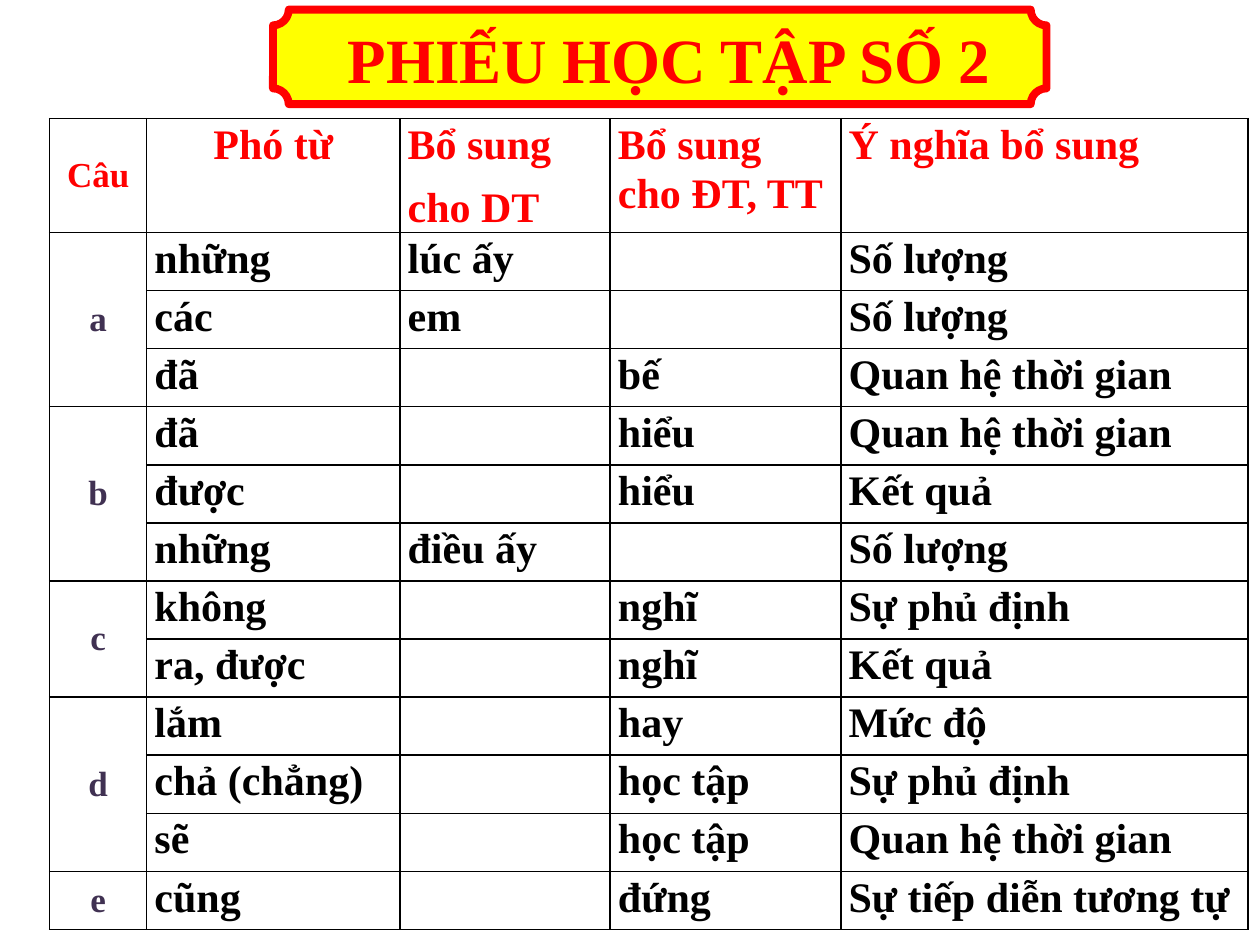
from lxml import etree
from pptx import Presentation
from pptx import util as u
from pptx.dml.color import RGBColor
from pptx.enum import shapes, text
from pptx.oxml import ns

RED, YELLOW, BLACK, PURPLE = "FF0000", "FFFF00", "000000", "403152"

COLUMN_WIDTHS = [55.4, 144.7, 120.2, 131.8, 232.6]
HEADER_HEIGHT, ROW_HEIGHT = 65, 33.2

HEADINGS = ["Câu", "Phó từ", "Bổ sung\ncho DT", "Bổ sung cho ĐT, TT", "Ý nghĩa bổ sung"]

# Sentence -> rows of: adverb, noun modified, verb or adjective modified, meaning
SENTENCES = {
    "a": [
        ("những", "lúc ấy", "", "Số lượng"),
        ("các", "em", "", "Số lượng"),
        ("đã", "", "bế", "Quan hệ thời gian"),
    ],
    "b": [
        ("đã", "", "hiểu", "Quan hệ thời gian"),
        ("được", "", "hiểu", "Kết quả"),
        ("những", "điều ấy", "", "Số lượng"),
    ],
    "c": [
        ("không", "", "nghĩ", "Sự phủ định"),
        ("ra, được", "", "nghĩ", "Kết quả"),
    ],
    "d": [
        ("lắm", "", "hay", "Mức độ"),
        ("chả (chẳng)", "", "học tập", "Sự phủ định"),
        ("sẽ", "", "học tập", "Quan hệ thời gian"),
    ],
    "e": [
        ("cũng", "", "đứng", "Sự tiếp diễn tương tự"),
    ],
}


def color(value):
    return RGBColor.from_string(value)


def set_all(target, values):
    for name, value in values.items():
        setattr(target, name, value)


class Worksheet:
    """Holds the text style and the current slide."""

    font = {"name": "Times New Roman", "bold": True}
    center = {"alignment": text.PP_ALIGN.CENTER}
    body = {"line_spacing": 1.07, "space_after": u.Pt(8)}
    body_cell = {
        "margin_left": u.Pt(4.5), "margin_right": u.Pt(4.5),
        "margin_top": 0, "margin_bottom": 0,
    }
    label_cell = {"vertical_anchor": text.MSO_ANCHOR.MIDDLE}

    def __init__(self, deck):
        self.page = deck.slides.add_slide(deck.slide_layouts[6])

    def add_lines(self, frame, words, size, ink, layout):
        """Add one paragraph for each line of words."""
        for number, line in enumerate(words.split("\n")):
            para = frame.add_paragraph() if number else frame.paragraphs[0]
            set_all(para, layout)
            span = para.add_run()
            span.text = line
            set_all(span.font, {**self.font, "size": u.Pt(size)})
            span.font.color.rgb = color(ink)

    def plaque(self, left, top, width, height):
        box = self.page.shapes.add_shape(
            shapes.MSO_SHAPE.PLAQUE, *map(u.Pt, (left, top, width, height)))
        box.shadow.inherit = False
        box.fill.solid()
        box.fill.fore_color.rgb = color(YELLOW)
        box.line.color.rgb = color(RED)
        box.line.width = u.Pt(4.5)

    def title(self, words, left, top, width, height):
        box = self.page.shapes.add_textbox(*map(u.Pt, (left, top, width, height)))
        set_all(box.text_frame, {
            "word_wrap": True, "auto_size": text.MSO_AUTO_SIZE.SHAPE_TO_FIT_TEXT})
        self.add_lines(box.text_frame, words, 36, RED, self.center)

    def outline(self, cell):
        """Give a cell thin black borders and no fill."""
        properties = cell._tc.get_or_add_tcPr()
        for side in ("a:lnL", "a:lnR", "a:lnT", "a:lnB"):
            line = etree.SubElement(properties, ns.qn(side), w=str(u.Pt(1)))
            fill = etree.SubElement(line, ns.qn("a:solidFill"))
            etree.SubElement(fill, ns.qn("a:srgbClr"), val=BLACK)
        cell.fill.background()

    def label(self, cell, words, ink):
        set_all(cell, self.label_cell)
        self.add_lines(cell.text_frame, words, 20, ink, self.center)

    def entry(self, cell, words, ink, layout):
        if words:
            set_all(cell, self.body_cell)
            self.add_lines(cell.text_frame, words, 24, ink, {**self.body, **layout})

    def table(self, left, top):
        row_count = 1 + sum(map(len, SENTENCES.values()))
        heights = [HEADER_HEIGHT] + [ROW_HEIGHT] * (row_count - 1)
        grid = self.page.shapes.add_table(
            row_count, len(COLUMN_WIDTHS), u.Pt(left), u.Pt(top),
            u.Pt(sum(COLUMN_WIDTHS)), u.Pt(sum(heights))).table
        set_all(grid, {"first_row": False, "horz_banding": False})
        for column, width in zip(grid.columns, COLUMN_WIDTHS):
            column.width = u.Pt(width)
        for row, height in zip(grid.rows, heights):
            row.height = u.Pt(height)
        for cell in grid.iter_cells():
            self.outline(cell)

        self.label(grid.cell(0, 0), HEADINGS[0], RED)
        for column, heading in enumerate(HEADINGS[1:], 1):
            layout = self.center if column == 1 else {}
            self.entry(grid.cell(0, column), heading, RED, layout)

        first = 1
        for sentence, entries in SENTENCES.items():
            last = first + len(entries) - 1
            if last > first:
                grid.cell(first, 0).merge(grid.cell(last, 0))
            self.label(grid.cell(first, 0), sentence, PURPLE)
            for row, words in enumerate(entries, first):
                for column, word in enumerate(words, 1):
                    self.entry(grid.cell(row, column), word, BLACK, {})
            first = last + 1


def main():
    deck = Presentation()
    set_all(deck, {"slide_width": u.Pt(720), "slide_height": u.Pt(540)})
    sheet = Worksheet(deck)
    sheet.table(28.4, 67.8)
    sheet.plaque(156, 5.5, 442, 54)
    sheet.title("PHIẾU HỌC TẬP SỐ 2", 178, 8, 409, 51)
    deck.save("out.pptx")


if __name__ == "__main__":
    main()
